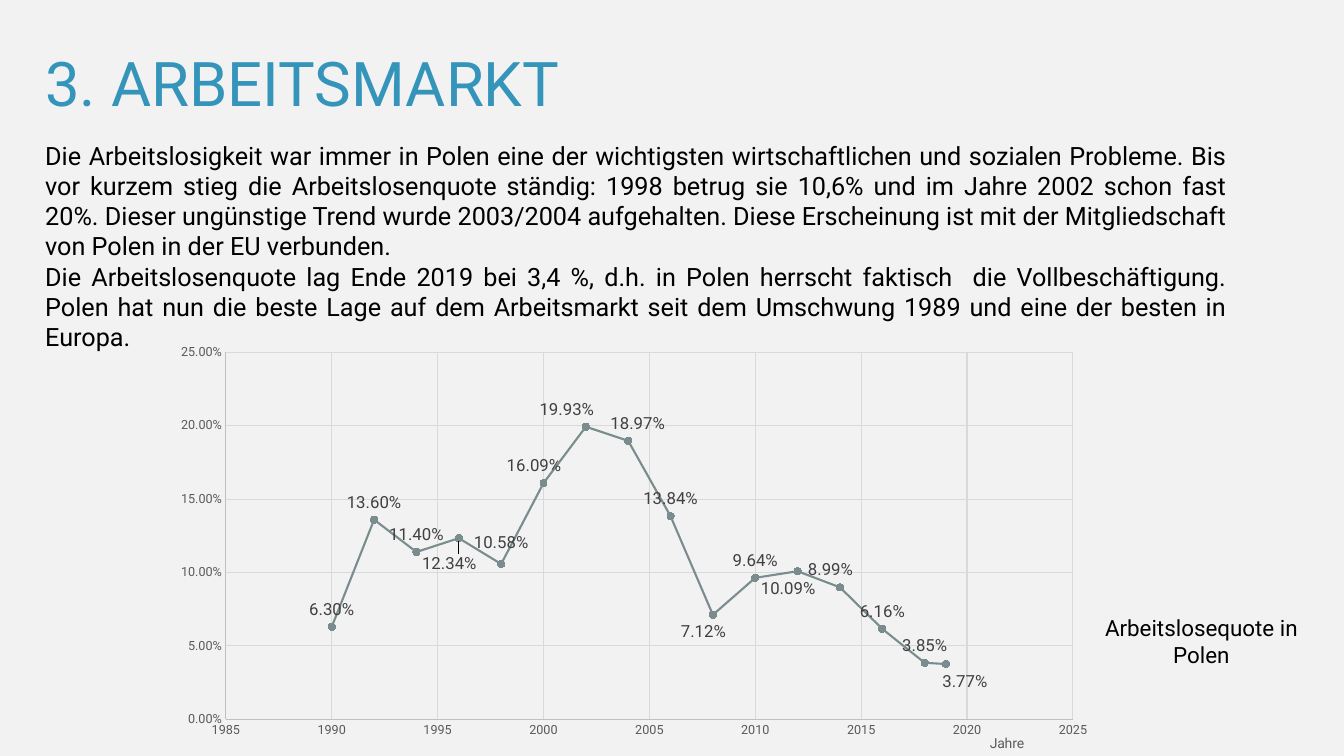
from dataclasses import dataclass

from lxml import etree
from pptx import Presentation
from pptx.chart.data import XyChartData
from pptx.dml.color import RGBColor
from pptx.enum.chart import XL_CHART_TYPE, XL_LABEL_POSITION, XL_MARKER_STYLE, XL_TICK_MARK
from pptx.enum.text import MSO_ANCHOR, PP_ALIGN
from pptx.oxml.ns import qn
from pptx.util import Inches, Pt

LEFT, CENTER, JUSTIFY = PP_ALIGN.LEFT, PP_ALIGN.CENTER, PP_ALIGN.JUSTIFY
TOP = MSO_ANCHOR.TOP
ABOVE, BELOW = XL_LABEL_POSITION.ABOVE, XL_LABEL_POSITION.BELOW
CIRCLE = XL_MARKER_STYLE.CIRCLE
NO_TICK = XL_TICK_MARK.NONE
SMOOTH = XL_CHART_TYPE.XY_SCATTER_SMOOTH


@dataclass(frozen=True)
class Theme:
    font: str = "Roboto"
    back: str = "F2F2F2"
    accent: str = "3494BA"
    ink: str = "000000"
    curve: str = "7A8C8E"
    label: str = "404040"
    muted: str = "595959"
    axis: str = "BFBFBF"
    grid: str = "D9D9D9"
    head: int = 44
    body: int = 18
    note: int = 16
    value: int = 12
    name: int = 10
    tick: int = 9


TITLE = "3. ARBEITSMARKT"
BODY = [
    "Die Arbeitslosigkeit war immer in Polen eine der wichtigsten wirtschaftlichen "
    "und sozialen Probleme. Bis vor kurzem stieg die Arbeitslosenquote ständig: 1998 "
    "betrug sie 10,6% und im Jahre 2002 schon fast 20%. Dieser ungünstige Trend wurde "
    "2003/2004 aufgehalten. Diese Erscheinung ist mit der Mitgliedschaft von Polen in "
    "der EU verbunden.",
    "Die Arbeitslosenquote lag Ende 2019 bei 3,4 %, d.h. in Polen herrscht faktisch  "
    "die Vollbeschäftigung. Polen hat nun die beste Lage auf dem Arbeitsmarkt seit dem "
    "Umschwung 1989 und eine der besten in Europa.",
]
NOTE = "Arbeitslosequote in Polen"
YEARS = [*range(1990, 2019, 2), 2019]
RATES = [6.30, 13.60, 11.40, 12.34, 10.58, 16.09, 19.93, 18.97,
         13.84, 7.12, 9.64, 10.09, 8.99, 6.16, 3.85, 3.77]
LOW = {1996, 2008, 2012, 2019}
SHIFTS = {1996: (-0.01, 0.02), 1998: (0, -0.01), 2000: (-0.01, 0),
          2002: (-0.02, 0), 2004: (0.01, 0), 2008: (-0.01, 0),
          2012: (-0.01, 0), 2014: (-0.01, 0), 2019: (0.02, 0)}


def style(font, theme, size, color):
    font.name = theme.font
    font.size = Pt(size)
    font.bold = False
    font.color.rgb = RGBColor.from_string(color)


def stroke(line, color, width):
    line.color.rgb = RGBColor.from_string(color)
    line.width = Pt(width)


def layout(parent, index, **parts):
    for old in parent.findall(qn("c:layout")):
        parent.remove(old)
    node = etree.Element(qn("c:layout"))
    manual = etree.SubElement(node, qn("c:manualLayout"))
    for tag, value in parts.items():
        etree.SubElement(manual, qn("c:" + tag)).set("val", str(value))
    parent.insert(index, node)


class Deck:
    def __init__(self, theme):
        self.theme = theme
        self.file = Presentation()
        self.file.slide_width = Inches(13.33)
        self.file.slide_height = Inches(7.5)
        self.slide = self.file.slides.add_slide(self.file.slide_layouts[6])
        fill = self.slide.background.fill
        fill.solid()
        fill.fore_color.rgb = RGBColor.from_string(theme.back)

    def place(self, x, y, w, h):
        wide, high = self.file.slide_width, self.file.slide_height
        return [int(side * share / 100)
                for side, share in zip((wide, high, wide, high), (x, y, w, h))]

    def text(self, text, at, *, size, color, align=LEFT, inset=0.05):
        frame = self.slide.shapes.add_textbox(*self.place(*at)).text_frame
        frame.word_wrap = True
        frame.vertical_anchor = TOP
        frame.margin_top = Inches(inset)
        frame.text = text
        for para in frame.paragraphs:
            para.alignment = align
            style(para.font, self.theme, size, color)
            for run in para.runs:
                style(run.font, self.theme, size, color)

    def axis(self, axis, low, high, step, form):
        axis.minimum_scale, axis.maximum_scale = low, high
        axis.major_unit = step
        axis.major_tick_mark = axis.minor_tick_mark = NO_TICK
        axis.has_major_gridlines = True
        stroke(axis.major_gridlines.format.line, self.theme.grid, 0.75)
        stroke(axis.format.line, self.theme.axis, 0.75)
        axis.tick_labels.number_format = form
        axis.tick_labels.number_format_is_linked = False
        style(axis.tick_labels.font, self.theme, self.theme.tick, self.theme.muted)

    def label(self, point, year):
        label = point.data_label
        style(label.font, self.theme, self.theme.value, self.theme.label)
        label.position = BELOW if year in LOW else ABOVE
        return label

    def chart(self, at):
        theme = self.theme
        data = XyChartData(number_format="0.00%")
        series = data.add_series("Series 1")
        for year, rate in zip(YEARS, RATES):
            series.add_data_point(year, round(rate / 100, 4))
        chart = self.slide.shapes.add_chart(SMOOTH, *self.place(*at), data).chart
        chart.has_title = chart.has_legend = False
        style(chart.font, theme, theme.name, theme.ink)
        self.axis(chart.category_axis, 1985, 2025, 5, "General")
        self.axis(chart.value_axis, 0, 0.25, 0.05, "0.00%")

        title = chart.category_axis.axis_title
        title.text_frame.text = "Jahre"
        style(title.text_frame.paragraphs[0].runs[0].font, theme, theme.name, theme.muted)
        layout(title._element, 1, xMode="edge", yMode="edge", x=0.87, y=0.95)

        plot = chart.plots[0]
        plot.vary_by_categories = False
        area = chart._chartSpace.find(".//" + qn("c:plotArea"))
        layout(area, 0, layoutTarget="inner", xMode="edge", yMode="edge",
               x=0.07, y=0.04, w=0.89, h=0.88)

        curve = plot.series[0]
        stroke(curve.format.line, theme.curve, 1.5)
        curve.marker.style = CIRCLE
        curve.marker.size = 5
        dot = curve.marker.format
        dot.fill.solid()
        dot.fill.fore_color.rgb = RGBColor.from_string(theme.curve)
        stroke(dot.line, theme.curve, 0.75)
        for index, year in enumerate(YEARS):
            self.label(curve.points[index], year)
        for node, year in zip(curve._element.iter(qn("c:dLbl")), YEARS):
            form = etree.Element(qn("c:numFmt"), formatCode="0.00%", sourceLinked="0")
            node.insert(1, form)
            if year in SHIFTS:
                x, y = SHIFTS[year]
                layout(node, 1, x=x, y=y)


def main():
    theme = Theme()
    deck = Deck(theme)
    deck.text(TITLE, (2.63, 4.67, 76.07, 13.87), size=theme.head,
              color=theme.accent, inset=0.1)
    deck.text("\n".join(BODY), (2.63, 17.87, 89.42, 41.73), size=theme.body,
              color=theme.ink, align=JUSTIFY)
    deck.chart((11.85, 44.4, 70.82, 55.6))
    deck.text(NOTE, (80.8, 80.53, 17.18, 19.47), size=theme.note,
              color=theme.ink, align=CENTER)
    deck.file.save("out.pptx")


if __name__ == "__main__":
    main()
